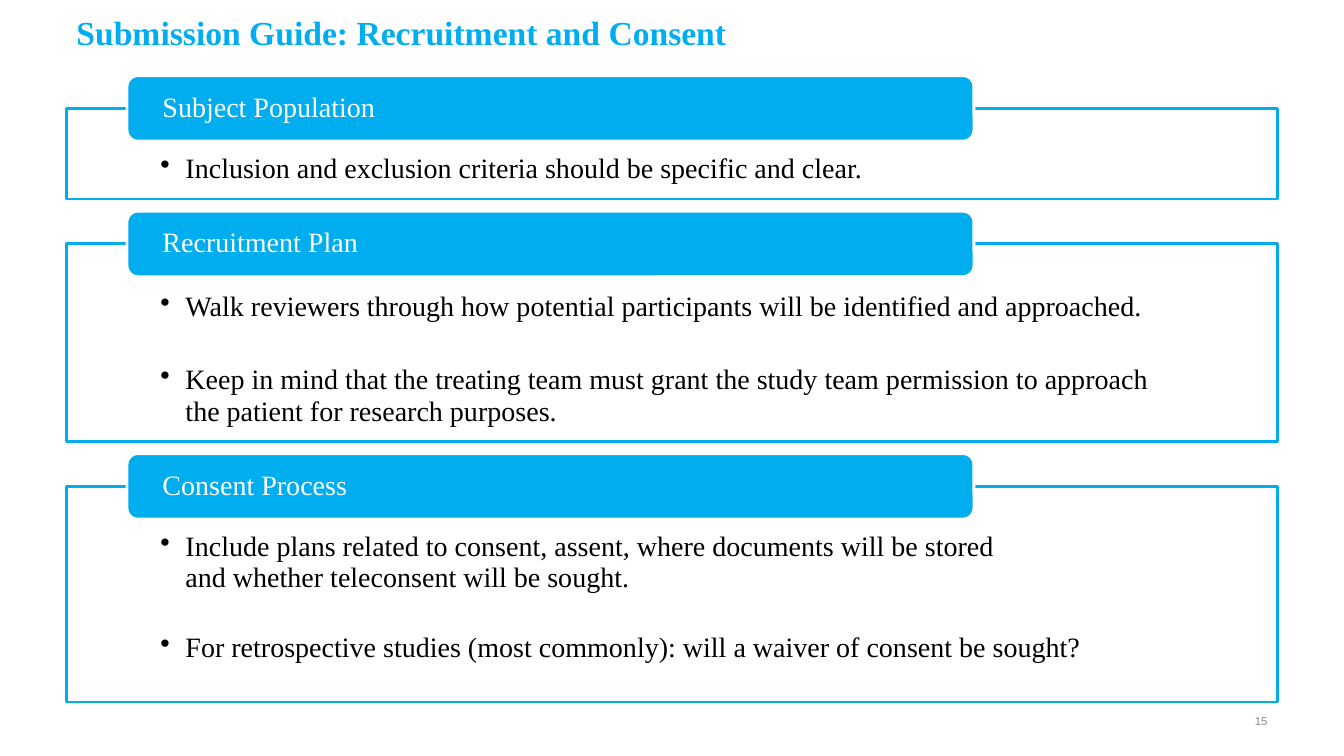
import pptx
import pptx.dml.color
import pptx.enum.shapes
import pptx.enum.text
import pptx.util
from dataclasses import dataclass
from lxml import etree

Inches, Pt = pptx.util.Inches, pptx.util.Pt
ANCHOR = pptx.enum.text.MSO_ANCHOR
ALIGN = pptx.enum.text.PP_ALIGN
SHAPE = pptx.enum.shapes.MSO_SHAPE

# Content
NBSP = chr(160)  # keeps the words it joins on one line
TITLE = "Submission Guide: Recruitment and Consent"
PAGE_NUMBER = "15"
# heading, frame height in inches, line spacing, bullets
SECTIONS = [
    ("Subject Population", 0.9, 0.9, [
        "Inclusion and exclusion criteria should be specific and clear.",
    ]),
    ("Recruitment Plan", 1.96, Pt(23), [
        "Walk reviewers through how potential participants will be identified and approached.",
        "Keep in mind that the treating team must grant the study team permission to approach "
        "the patient for research purposes.",
    ]),
    ("Consent Process", 2.14, 0.9, [
        "Include plans related to consent, assent, where documents will be stored "
        f"and{NBSP}whether{NBSP}teleconsent{NBSP}will be sought.",
        "For retrospective studies (most commonly): will a waiver of consent be sought?",
    ]),
]


@dataclass(frozen=True)
class Theme:
    accent: str = "00AEEF"
    white: str = "FFFFFF"
    black: str = "000000"
    gray: str = "8C8C8C"
    serif: str = "Times New Roman"
    sans: str = "Arial"
    title_size: float = 24
    body_size: float = 20
    number_size: float = 8.2
    line_width: float = 2


THEME = Theme()

# Layout in inches
FRAME_LEFT, FRAME_WIDTH = 0.66, 12.01
TAB_LEFT, TAB_WIDTH, TAB_HEIGHT = 1.26, 8.4, 0.65
FIRST_TAB_TOP, SECTION_GAP = 0.75, 0.12
BULLET_INDENT, BULLET_GAP = 0.25, 29


def color(value):
    return pptx.dml.color.RGBColor.from_string(value)


def add_bullet(paragraph):
    properties = paragraph._p.get_or_add_pPr()
    indent = Inches(BULLET_INDENT)
    properties.set("marL", str(indent))
    properties.set("indent", str(-indent))
    bullet = etree.SubElement(properties, pptx.oxml.ns.qn("a:buChar"))
    bullet.set("char", "•")


def write_text(shape, lines, size=THEME.body_size, font=THEME.serif, ink=THEME.black,
               bold=False, align=ALIGN.LEFT, anchor=ANCHOR.TOP, insets=(0.1, 0.05, 0.1, 0.05),
               spacing=1.0, gap=0, bullets=False):
    frame = shape.text_frame
    frame.word_wrap = True
    frame.vertical_anchor = anchor
    (frame.margin_left, frame.margin_top,
     frame.margin_right, frame.margin_bottom) = map(Inches, insets)
    for index, line in enumerate(lines):
        paragraph = frame.add_paragraph() if index else frame.paragraphs[0]
        if bullets:
            add_bullet(paragraph)
        paragraph.text = line
        paragraph.alignment = align
        paragraph.line_spacing = spacing
        paragraph.space_before = Pt(gap if index else 0)
        paragraph.font.name = font
        paragraph.font.size = Pt(size)
        paragraph.font.bold = bold
        paragraph.font.color.rgb = color(ink)


def add_panel(slide, kind, box, fill, line):
    shape = slide.shapes.add_shape(kind, *map(Inches, box))
    shape.shadow.inherit = False
    shape.fill.solid()
    shape.fill.fore_color.rgb = color(fill)
    shape.line.color.rgb = color(line)
    shape.line.width = Pt(THEME.line_width)
    return shape


def main():
    presentation = pptx.Presentation()
    presentation.slide_width = Inches(13.33)
    presentation.slide_height = Inches(7.5)
    slide = presentation.slides.add_slide(presentation.slide_layouts[6])

    # Title and page number
    title = slide.shapes.add_textbox(*map(Inches, (FRAME_LEFT, 0.07, 12.29, 0.68)))
    write_text(title, [TITLE], size=THEME.title_size, ink=THEME.accent, bold=True)
    number = slide.shapes.add_textbox(*map(Inches, (9.56, 6.95, 3.11, 0.4)))
    write_text(number, [PAGE_NUMBER], size=THEME.number_size, font=THEME.sans,
               ink=THEME.gray, align=ALIGN.RIGHT, anchor=ANCHOR.MIDDLE)

    # Sections: each heading tab straddles the top edge of its frame
    tab_top = FIRST_TAB_TOP
    for heading, height, spacing, bullets in SECTIONS:
        frame_top = tab_top + TAB_HEIGHT / 2
        frame = add_panel(slide, SHAPE.RECTANGLE, (FRAME_LEFT, frame_top, FRAME_WIDTH, height),
                          THEME.white, THEME.accent)
        write_text(frame, bullets, insets=(0.93, 0.46, 0.93, 0.16),
                   spacing=spacing, gap=BULLET_GAP, bullets=True)
        tab = add_panel(slide, SHAPE.ROUNDED_RECTANGLE,
                        (TAB_LEFT, tab_top, TAB_WIDTH, TAB_HEIGHT), THEME.accent, THEME.white)
        write_text(tab, [heading], ink=THEME.white, anchor=ANCHOR.MIDDLE,
                   insets=(0.32, 0, 0.32, 0), spacing=0.9)
        tab_top = frame_top + height + SECTION_GAP

    presentation.save("out.pptx")


if __name__ == "__main__":
    main()
